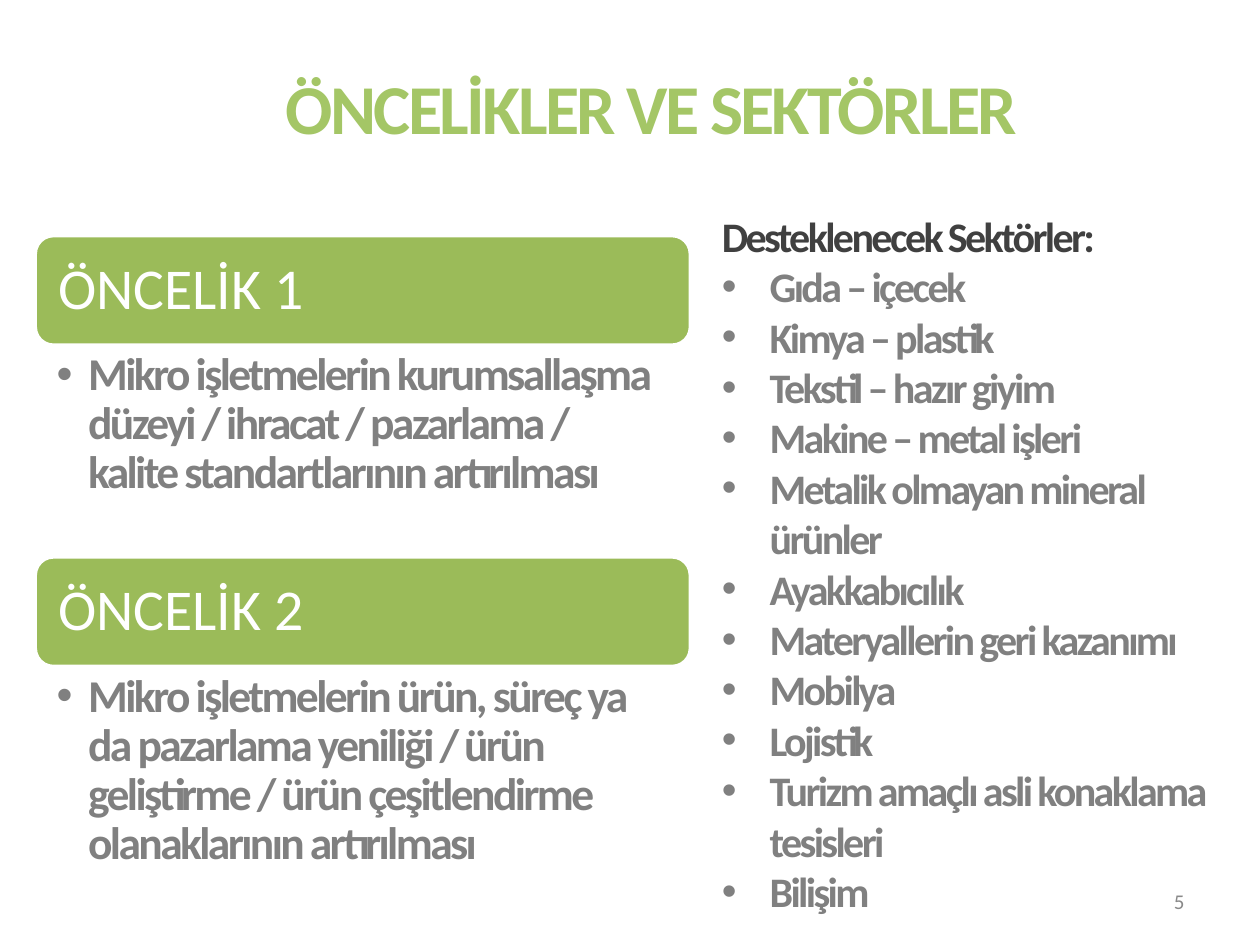
from dataclasses import dataclass

from lxml import etree
from pptx import Presentation
from pptx.dml.color import RGBColor
from pptx.enum.shapes import MSO_SHAPE
from pptx.enum.text import MSO_ANCHOR, PP_ALIGN
from pptx.oxml import parse_xml
from pptx.oxml.ns import nsdecls, qn
from pptx.util import Inches, Pt

ROUNDED = MSO_SHAPE.ROUNDED_RECTANGLE
TOP, MIDDLE = MSO_ANCHOR.TOP, MSO_ANCHOR.MIDDLE
LEFT, CENTER, RIGHT = PP_ALIGN.LEFT, PP_ALIGN.CENTER, PP_ALIGN.RIGHT


@dataclass(frozen=True)
class Theme:
    font: str = "Calibri"
    title: str = "A4C666"
    green: str = "9BBB59"
    white: str = "FFFFFF"
    dark: str = "404040"
    gray: str = "808080"
    number: str = "898989"
    title_size: int = 40
    heading_size: int = 33
    body_size: int = 26
    sector_size: int = 24
    number_size: int = 12


THEME = Theme()


def set_up_frame(shape, anchor=TOP, insets=(0.1, 0.05, 0.1, 0.05)):
    """Wrap and anchor the text; insets are left, top, right, bottom in inches."""
    frame = shape.text_frame
    frame.word_wrap = True
    frame.vertical_anchor = anchor
    frame.margin_left, frame.margin_top, frame.margin_right, frame.margin_bottom = map(Inches, insets)
    return frame


def write_paragraph(paragraph, text, size, color, bold=False, align=LEFT, indent=None):
    """Add one run; an indent gives a hanging bullet, bold text is set tight."""
    paragraph.alignment = align
    if indent:
        properties = paragraph._p.get_or_add_pPr()
        properties.set("marL", str(Inches(indent)))
        properties.set("indent", str(-Inches(indent)))
        etree.SubElement(properties, qn("a:buFont")).set("typeface", "Arial")
        etree.SubElement(properties, qn("a:buChar")).set("char", "•")
    run = paragraph.add_run()
    run.text = text
    run.font.name = THEME.font
    run.font.size = Pt(size)
    run.font.bold = bold
    run.font.color.rgb = RGBColor.from_string(color)
    if bold:
        run.font._element.set("spc", "-150")
    return run


presentation = Presentation()
presentation.slide_width = Inches(10)
presentation.slide_height = Inches(7.5)
slide = presentation.slides.add_slide(presentation.slide_layouts[5])

# Title with a soft shadow falling to the lower left
title = slide.shapes.title
title.left, title.top, title.width, title.height = map(Inches, (0.67, 0.22, 9, 1.25))
frame = set_up_frame(title, MIDDLE)
run = write_paragraph(frame.paragraphs[0], "ÖNCELİKLER VE SEKTÖRLER", THEME.title_size,
                      THEME.title, bold=True, align=CENTER)
shadow = parse_xml(
    f'<a:effectLst {nsdecls("a")}><a:outerShdw blurRad="{Inches(0.12)}" dist="{Inches(0.28)}" '
    'dir="8100000" algn="tr" rotWithShape="0"><a:srgbClr val="000000">'
    '<a:alpha val="50000"/></a:srgbClr></a:outerShdw></a:effectLst>')
run.font._element.find(qn("a:solidFill")).addnext(shadow)

# Priorities
priorities = [
    ("ÖNCELİK 1", "Mikro işletmelerin kurumsallaşma düzeyi / ihracat / pazarlama / "
                  "kalite standartlarının artırılması"),
    ("ÖNCELİK 2", "Mikro işletmelerin ürün, süreç ya da pazarlama yeniliği / ürün geliştirme / "
                  "ürün çeşitlendirme olanaklarının artırılması"),
]
left, width, heading_height, body_height = 0.28, 5.2, 0.87, 1.68
for index, (heading, description) in enumerate(priorities):
    top = 1.87 + index * (heading_height + body_height)
    bar = slide.shapes.add_shape(ROUNDED, Inches(left), Inches(top),
                                 Inches(width), Inches(heading_height))
    bar.shadow.inherit = False
    bar.fill.solid()
    bar.fill.fore_color.rgb = RGBColor.from_string(THEME.green)
    bar.line.color.rgb = RGBColor.from_string(THEME.white)
    bar.line.width = Pt(2)
    paragraph = set_up_frame(bar, MIDDLE, (0.14, 0.14, 0.14, 0.14)).paragraphs[0]
    paragraph.line_spacing = 0.9
    write_paragraph(paragraph, heading, THEME.heading_size, THEME.white)

    body = slide.shapes.add_textbox(Inches(left), Inches(top + heading_height),
                                    Inches(width), Inches(body_height))
    paragraph = set_up_frame(body, insets=(0.17, 0.05, 0.26, 0.05)).paragraphs[0]
    paragraph.line_spacing = 0.9
    write_paragraph(paragraph, description, THEME.body_size, THEME.gray, bold=True, indent=0.25)

# Supported sectors
sectors = ["Gıda – içecek", "Kimya – plastik", "Tekstil – hazır giyim", "Makine – metal işleri",
           "Metalik olmayan mineral ürünler", "Ayakkabıcılık", "Materyallerin geri kazanımı",
           "Mobilya", "Lojistik", "Turizm amaçlı asli konaklama tesisleri", "Bilişim"]
sector_box = slide.shapes.add_textbox(Inches(5.63), Inches(1.62), Inches(4.32), Inches(5.76))
frame = set_up_frame(sector_box)
write_paragraph(frame.paragraphs[0], "Desteklenecek Sektörler:", THEME.sector_size,
                THEME.dark, bold=True)
for sector in sectors:
    write_paragraph(frame.add_paragraph(), sector, THEME.sector_size, THEME.gray,
                    bold=True, indent=0.38)

# Slide number
number_box = slide.shapes.add_textbox(Inches(7.17), Inches(6.95), Inches(2.33), Inches(0.4))
frame = set_up_frame(number_box, MIDDLE)
write_paragraph(frame.paragraphs[0], "5", THEME.number_size, THEME.number, align=RIGHT)

presentation.save("out.pptx")
